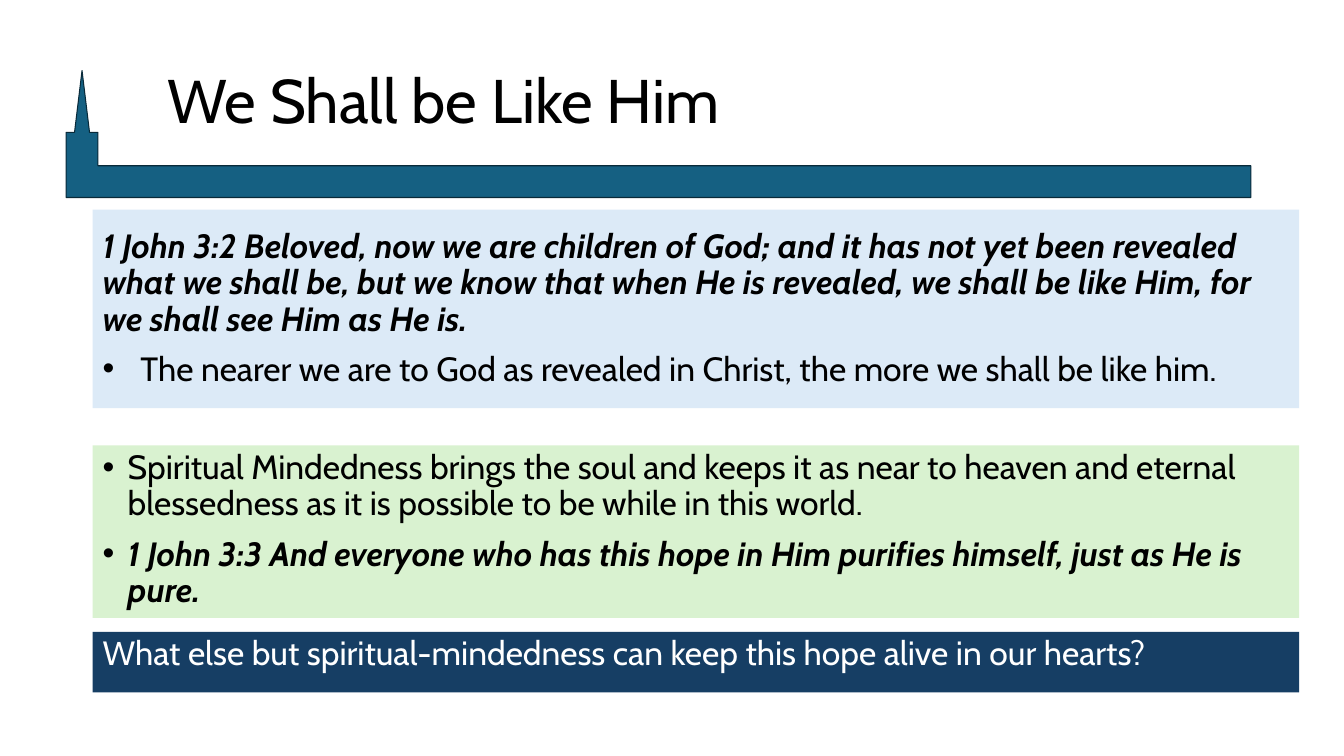
from lxml.etree import SubElement
from pptx import Presentation
from pptx.dml.color import RGBColor
from pptx.enum.shapes import MSO_SHAPE
from pptx.enum.text import MSO_ANCHOR, MSO_AUTO_SIZE, PP_ALIGN
from pptx.oxml.ns import qn
from pptx.util import Pt

FONT = "Cabin"
TITLE = "We Shall be Like Him"

# Panels: top, height, fill, text colour, anchor, paragraphs (text, hanging indent, bold italic)
PANELS = [
    (149.8, 141.8, "DCEAF7", "000000", MSO_ANCHOR.MIDDLE, [
        ("1 John 3:2 Beloved, now we are children of God; and it has not yet been "
         "revealed what we shall be, but we know that when He is revealed, we shall "
         "be like Him, for we shall see Him as He is.", 0, True),
        ("The nearer we are to God as revealed in Christ, the more we shall be like him.",
         27, False),
    ]),
    (318.2, 123.1, "D9F2D0", "000000", MSO_ANCHOR.TOP, [
        ("Spiritual Mindedness brings the soul and keeps it as near to heaven and eternal "
         "blessedness as it is possible to be while in this world.", 18, False),
        ("1 John 3:3 And everyone who has this hope in Him purifies himself, "
         "just as He is pure.", 18, True),
    ]),
    (451.4, 43.2, "163E64", "FFFFFF", MSO_ANCHOR.TOP, [
        ("What else but spiritual-mindedness can keep this hope alive in our hearts?",
         0, False),
    ]),
]
PANEL_LEFT, PANEL_WIDTH = 66.2, 861.8


def color(value):
    return RGBColor.from_string(value)


def set_frame(frame, anchor):
    frame.word_wrap = True
    frame.auto_size = MSO_AUTO_SIZE.NONE
    frame.vertical_anchor = anchor


def add_text(para, text, size, hue, strong=False):
    para.alignment = PP_ALIGN.LEFT
    para.line_spacing = 0.9
    span = para.add_run()
    span.text = text
    span.font.name = FONT
    span.font.size = Pt(size)
    span.font.color.rgb = color(hue)
    span.font.bold = span.font.italic = strong


def add_bullet(para, indent):
    properties = para._p.get_or_add_pPr()
    properties.set("marL", str(Pt(indent)))
    properties.set("indent", str(-Pt(indent)))
    SubElement(properties, qn("a:buFont"), typeface="Arial")
    SubElement(properties, qn("a:buChar"), char="•")


def add_shape(page, kind, left, top, width, height, fill):
    box = page.shapes.add_shape(kind, Pt(left), Pt(top), Pt(width), Pt(height))
    box.shadow.inherit = False
    box.fill.solid()
    box.fill.fore_color.rgb = color(fill)
    return box


def add_panel(page, top, height, fill, hue, anchor, paragraphs):
    box = add_shape(page, MSO_SHAPE.RECTANGLE, PANEL_LEFT, top, PANEL_WIDTH, height, fill)
    box.line.fill.background()
    frame = box.text_frame
    set_frame(frame, anchor)
    for index, (text, indent, strong) in enumerate(paragraphs):
        para = frame.add_paragraph() if index else frame.paragraphs[0]
        if indent:
            add_bullet(para, indent)
        para.space_before = Pt(10 if index else 0)
        add_text(para, text, 24, hue, strong)


def main():
    deck = Presentation()
    deck.slide_width, deck.slide_height = Pt(960), Pt(540)
    page = deck.slides.add_slide(deck.slide_layouts[5])

    # Steeple and bar under the title
    steeple = add_shape(page, MSO_SHAPE.BENT_UP_ARROW, 53.3, 50.4, 840.2, 90.7, "156082")
    steeple.line.color.rgb = color("092A39")
    steeple.line.width = Pt(0.75)
    for index, value in enumerate((0.25, 0.059, 0.487)):
        steeple.adjustments[index] = value
    steeple.element.spPr.find(qn("a:xfrm")).set("flipH", "1")

    # Title
    title = page.shapes.title
    title.left, title.top, title.width, title.height = map(Pt, (112.3, 28.8, 781.9, 90.7))
    set_frame(title.text_frame, MSO_ANCHOR.MIDDLE)
    add_text(title.text_frame.paragraphs[0], TITLE, 44, "000000")

    # Text panels
    for panel in PANELS:
        add_panel(page, *panel)

    deck.save("out.pptx")


if __name__ == "__main__":
    main()
